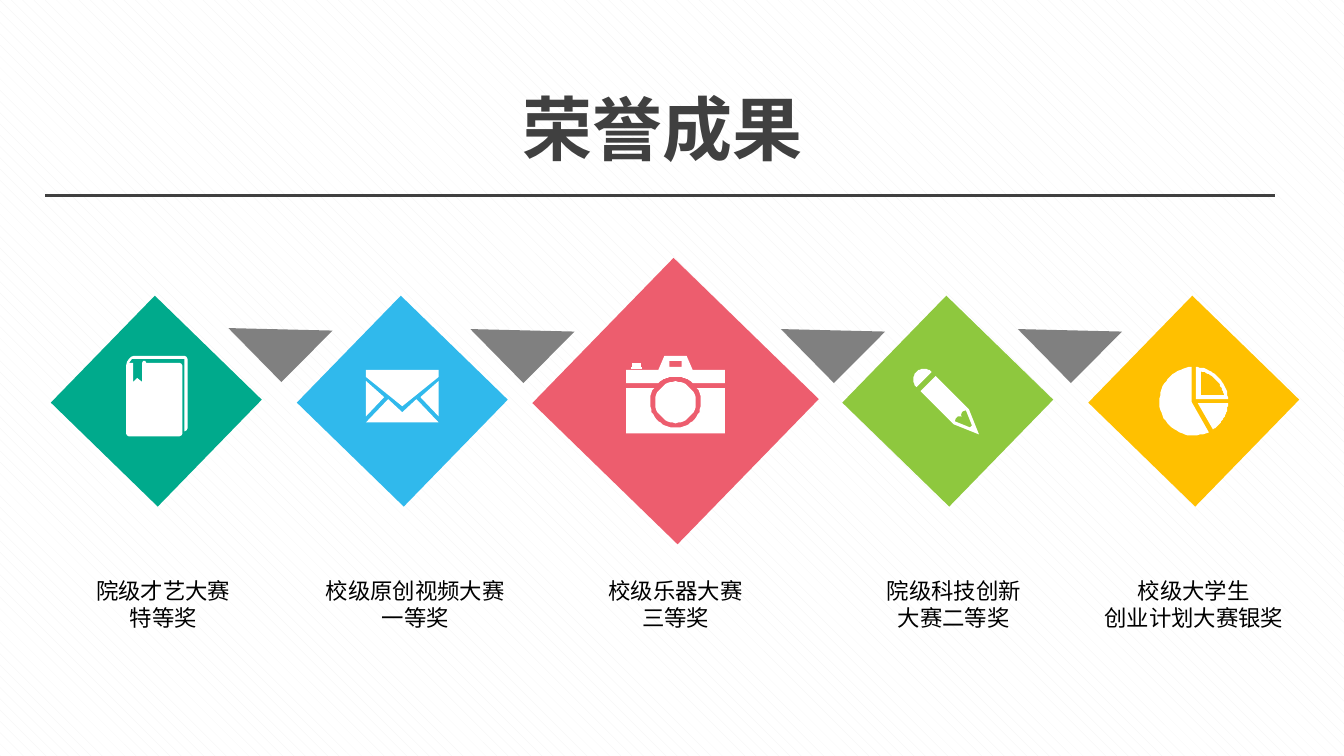
from math import cos, radians, sin

from pptx import Presentation
from pptx.dml.color import RGBColor
from pptx.enum.dml import MSO_PATTERN
from pptx.enum.shapes import MSO_CONNECTOR, MSO_SHAPE
from pptx.enum.text import PP_ALIGN
from pptx.oxml.ns import qn
from pptx.util import Inches, Pt

WIDE, HIGH = 13.33, 7.5
MID = 3.98  # height of the row of diamonds
UNIT = Inches(0.01)  # icons are drawn in hundredths of an inch
FONT = "Noto Sans CJK SC"
HUES = {
    "teal": "00AA8C", "blue": "30B9EC", "rose": "ED5D6E", "lime": "8EC83E",
    "gold": "FFC000", "dark": "404040", "gray": "808080", "black": "000000",
    "white": "FFFFFF", "mist": "F2F2F2",
}


def hue(name):
    return RGBColor.from_string(HUES[name])


def arc(x, y, r, start, end, steps=24):
    """Points on a circle, with angles in degrees clockwise from the right."""
    turns = [radians(start + (end - start) * i / steps) for i in range(steps + 1)]
    return [(x + r * cos(t), y + r * sin(t)) for t in turns]


def rect(x, y, wide, high):
    return [(x, y), (x + wide, y), (x + wide, y + high), (x, y + high)]


# Each icon is a list of shapes, a shape is a list of outlines around (0, 0).
BOOK = [[[
    (28, -45), (-22, -45), (-25, -44), (-27, -42), (-29, -39), (-30, -35),
    (-30, 32), (-29, 34), (-27, 35), (23, 35), (25, 34), (26, 32), (26, -35),
    (25, -37), (23, -38), (-10, -38), (-11, -40), (-13, -40), (-14, -38),
    (-14, -19), (-19, -23), (-23, -19), (-23, -38), (-27, -38), (-24, -42),
    (28, -42), (28, 30), (30, 29), (31, 27), (31, -42), (30, -44),
]]]
MAIL = [[
    [(-36, -24), (0, 5), (36, -24), (36, -31), (-36, -31)],
    [(-36, 15), (-18, -4), (-36, -20)],
    [(36, 15), (18, -4), (36, -20)],
    [(0, 11), (-14, -2), (-36, 21), (36, 21), (14, -2)],
]]
CAMERA = [
    [arc(0, 1, 20.5, 0, 360, 48)],
    [[(-49, -13), (-49, 32), (49, 32), (49, -13)] + arc(0, 1, 25.5, -33, 213, 40)],
    [[(49, -31), (17, -31), (11, -45), (-11, -45), (-17, -31), (-49, -31),
      (-49, -18)] + arc(0, 1, 25.5, 228, 312) + [(49, -18)],
     rect(-6, -40, 12, 6)],
    [rect(-44, -34, 11, 2)],
    [rect(-43, -38, 9, 5)],
]
PENCIL = [
    [arc(-23.5, -21.5, 10.6, 135, 315)],
    [[(6, 23), (31, 33), (21, 8), (-12, -25), (-27, -10)],
     [(9, 16), (10, 15), (14, 15), (13, 14), (14, 11), (15, 10), (18, 9),
      (24, 24), (22, 26), (7, 20), (8, 17)]],
]
PIE = [[
    [(-2, 1)] + arc(0, 0, 34, 64, 267, 40),
    [(2, -2)] + arc(0, 0, 34, 273, 357),
    [(7, -6)] + arc(0, 0, 30.6, -11, -77),
    [(4, 2)] + arc(0, 0, 34, 4, 56),
]]

# hue, centre, side, icon, caption centre, caption width, caption
PRIZES = [
    ("teal", 1.55, 1.48, BOOK, 1.62, 2.34, ["院级才艺大赛", "特等奖"]),
    ("blue", 3.99, 1.48, MAIL, 4.12, 2.34, ["校级原创视频大赛", "一等奖"]),
    ("rose", 6.7, 2.01, CAMERA, 6.7, 1.99, ["校级乐器大赛", "三等奖"]),
    ("lime", 9.4, 1.48, PENCIL, 9.46, 1.99, ["院级科技创新", "大赛二等奖"]),
    ("gold", 11.84, 1.48, PIE, 11.84, 1.99, ["校级大学生", "创业计划大赛银奖"]),
]
WEDGES = [(2.41, 2.91), (4.81, 2.92), (7.89, 2.92), (10.24, 2.92)]


def paint(shape, name):
    shape.shadow.inherit = False
    shape.fill.solid()
    shape.fill.fore_color.rgb = hue(name)
    shape.line.fill.background()


def block(shapes, kind, box, name, turn):
    shape = shapes.add_shape(kind, *map(Inches, box))
    shape.rotation = turn
    paint(shape, name)
    return shape


def write(shapes, box, lines, name, look):
    frame = shapes.add_textbox(*map(Inches, box)).text_frame
    frame.word_wrap = True
    for i, line in enumerate(lines):
        para = frame.add_paragraph() if i else frame.paragraphs[0]
        para.alignment = PP_ALIGN.CENTER
        run = para.add_run()
        run.text = line
        run.font.color.rgb = hue(name)
        for key, value in look.items():
            setattr(run.font, key, value)
        props = run.font._element
        east = props.makeelement(qn("a:ea"), {"typeface": FONT})
        props.find(qn("a:latin")).addnext(east)


def draw(shapes, icon, x, y):
    for outlines in icon:
        pen = None
        for first, *rest in outlines:
            if pen is None:
                pen = shapes.build_freeform(*first, scale=UNIT)
            else:
                pen.move_to(*first)
            pen.add_line_segments(rest, close=True)
        paint(pen.convert_to_shape(Inches(x), Inches(y)), "white")


def prize(slide, name, x, side, icon, text_x, wide, lines):
    shapes = slide.shapes.add_group_shape().shapes
    box = (x - side / 2, MID - side / 2, side, side)
    block(shapes, MSO_SHAPE.RECTANGLE, box, name, 44.2)
    draw(shapes, icon, x, MID)
    look = {"size": Pt(16), "name": FONT}
    write(shapes, (text_x - wide / 2, 5.68, wide, 0.64), lines, "black", look)


def wedge(slide, x, y):
    box = (x, y, 0.75, 0.72)
    shape = block(slide.shapes, MSO_SHAPE.ISOSCELES_TRIANGLE, box, "gray", 45.5)
    shape.adjustments[0] = 0.99


def header(slide, x, y, wide, high):
    look = {"size": Pt(50), "name": FONT, "bold": True}
    write(slide.shapes, (x, y, wide, high), ["荣誉成果"], "dark", look)
    ends = (x - 0.03, y + 1.14, x + wide - 0.01, y + 1.14)
    rule = slide.shapes.add_connector(MSO_CONNECTOR.STRAIGHT, *map(Inches, ends))
    rule.line.color.rgb = hue("dark")
    rule.line.width = Pt(2)
    props = rule._element.spPr
    props.append(props.makeelement(qn("a:effectLst"), {}))


def main():
    deck = Presentation()
    deck.slide_width, deck.slide_height = Inches(WIDE), Inches(HIGH)
    slide = deck.slides.add_slide(deck.slide_layouts[6])
    back = slide.background.fill
    back.patterned()
    back.pattern = MSO_PATTERN.SHINGLE
    back.fore_color.rgb = hue("mist")
    back.back_color.rgb = hue("white")
    for item in PRIZES:
        prize(slide, *item)
    for spot in WEDGES:
        wedge(slide, *spot)
    header(slide, 0.48, 0.8, 12.18, 0.94)
    deck.save("out.pptx")


if __name__ == "__main__":
    main()
